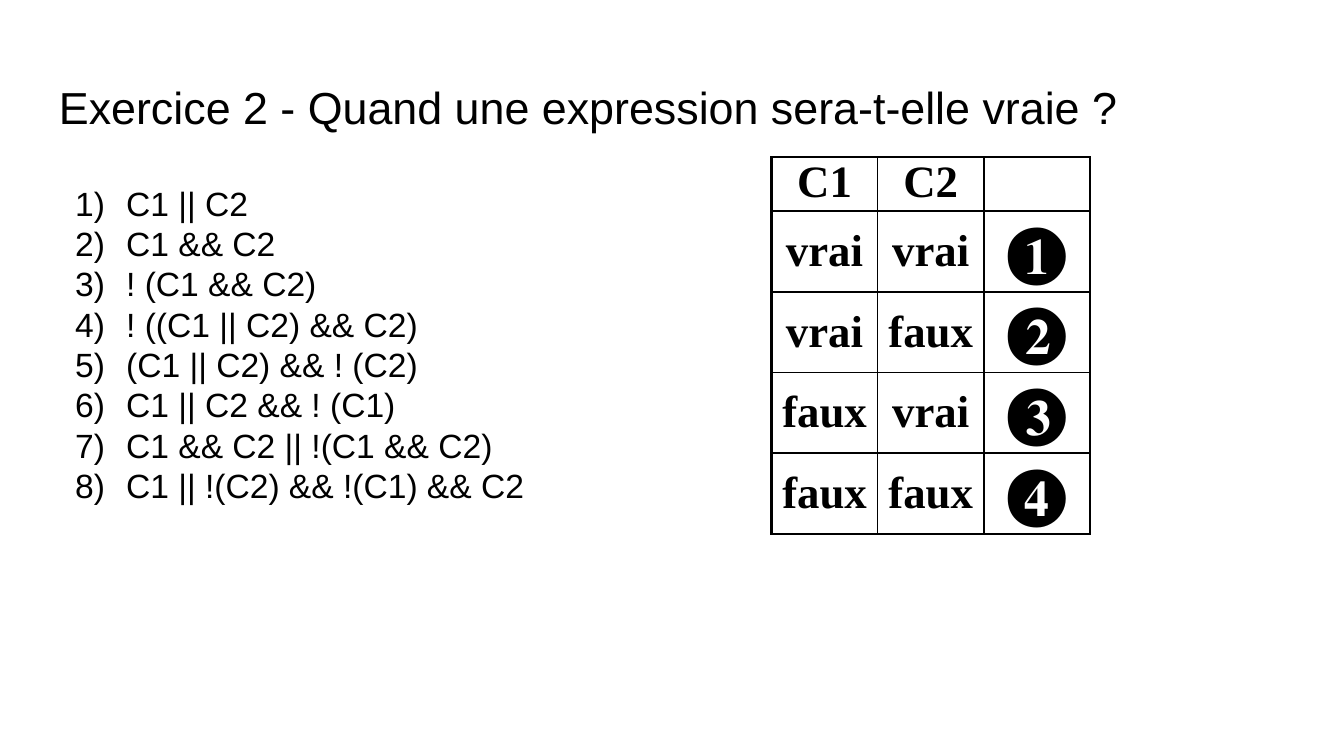
from lxml.etree import SubElement
from pptx import Presentation
from pptx.dml.color import RGBColor
from pptx.enum.text import PP_ALIGN, MSO_ANCHOR
from pptx.oxml.ns import qn
from pptx.util import Inches, Pt

BLACK = RGBColor(0, 0, 0)
TITLE = "Exercice 2 - Quand une expression sera-t-elle vraie ?"
TESTS = [
    "C1 || C2",
    "C1 && C2",
    "! (C1 && C2)",
    "! ((C1 || C2) && C2)",
    "(C1 || C2) && ! (C2)",
    "C1 || C2 && ! (C1)",
    "C1 && C2 || !(C1 && C2)",
    "C1 || !(C2) && !(C1) && C2",
]
TRUTH = [
    ("C1", "C2", ""),
    ("vrai", "vrai", "❶"),
    ("vrai", "faux", "❷"),
    ("faux", "vrai", "❸"),
    ("faux", "faux", "❹"),
]


class Page:
    """Hold the style and the current slide, and add its elements."""

    def __init__(self, deck):
        self.slide = deck.slides.add_slide(deck.slide_layouts[6])
        self.sans = "Arial"
        self.serif = "Times New Roman"

    def style(self, para, name, size, bold=False):
        for run in para.runs:
            font = run.font
            font.name, font.size, font.bold = name, Pt(size), bold
            font.color.rgb = BLACK

    def text(self, words, left, top, width, height, size):
        box = self.slide.shapes.add_textbox(
            Inches(left), Inches(top), Inches(width), Inches(height))
        frame = box.text_frame
        frame.word_wrap = True
        frame.vertical_anchor = MSO_ANCHOR.TOP
        frame.margin_left = frame.margin_right = Inches(0.1)
        frame.margin_top = frame.margin_bottom = Inches(0.1)
        frame.text = words
        for para in frame.paragraphs:
            self.style(para, self.sans, size)
        return frame

    def steps(self, items, left, top, width, height, size):
        frame = self.text("\n".join(items), left, top, width, height, size)
        for para in frame.paragraphs:
            para.line_spacing = Pt(1.2 * size)
            props = para._p.get_or_add_pPr()
            props.set("marL", str(Inches(0.5)))
            props.set("indent", str(Inches(-0.38)))
            SubElement(props, qn("a:buFont"), typeface=self.sans)
            SubElement(props, qn("a:buAutoNum"), type="arabicParenR")

    def edge(self, cell, side, width):
        props = cell._tc.get_or_add_tcPr()
        line = SubElement(props, qn(f"a:ln{side}"), w=str(Pt(width)))
        fill = SubElement(line, qn("a:solidFill"))
        SubElement(fill, qn("a:srgbClr"), val=str(BLACK))

    def grid(self, rows, left, top, col, height, head, body):
        count, span = len(rows), len(rows[0])
        frame = self.slide.shapes.add_table(
            count, span, Inches(left), Inches(top),
            Inches(col * span), Inches(height))
        table = frame.table
        table.first_row = table.horz_banding = False
        for column in table.columns:
            column.width = Inches(col)
        for r, row in enumerate(rows):
            table.rows[r].height = Inches(body if r else head)
            for c, word in enumerate(row):
                cell = table.cell(r, c)
                cell.margin_left = cell.margin_right = Inches(0.07)
                cell.margin_top = cell.margin_bottom = 0
                cell.vertical_anchor = MSO_ANCHOR.MIDDLE if r else MSO_ANCHOR.TOP
                para = cell.text_frame.paragraphs[0]
                if word:
                    para.text = word
                para.alignment = PP_ALIGN.CENTER
                self.style(para, self.serif, 36 if c == span - 1 else 24, True)
                thick = {
                    "L": c == 0,
                    "R": c == span - 1,
                    "T": r < 2,
                    "B": r in (0, count - 1),
                }
                for side, wide in thick.items():
                    self.edge(cell, side, 1.5 if wide else 1)
                cell.fill.background()
        frame.height = Inches(height)


def main():
    deck = Presentation()
    deck.slide_width = Inches(10)
    deck.slide_height = deck.slide_width * 9 // 16
    page = Page(deck)
    page.text(TITLE, 0.34, 0.49, 9.32, 0.63, 24)
    page.steps(TESTS, 0.34, 1.26, 9.32, 4.17, 18)
    page.grid(TRUTH, 5.74, 1.17, 0.79, 2.8, 0.33, 0.5)
    deck.save("out.pptx")


if __name__ == "__main__":
    main()
